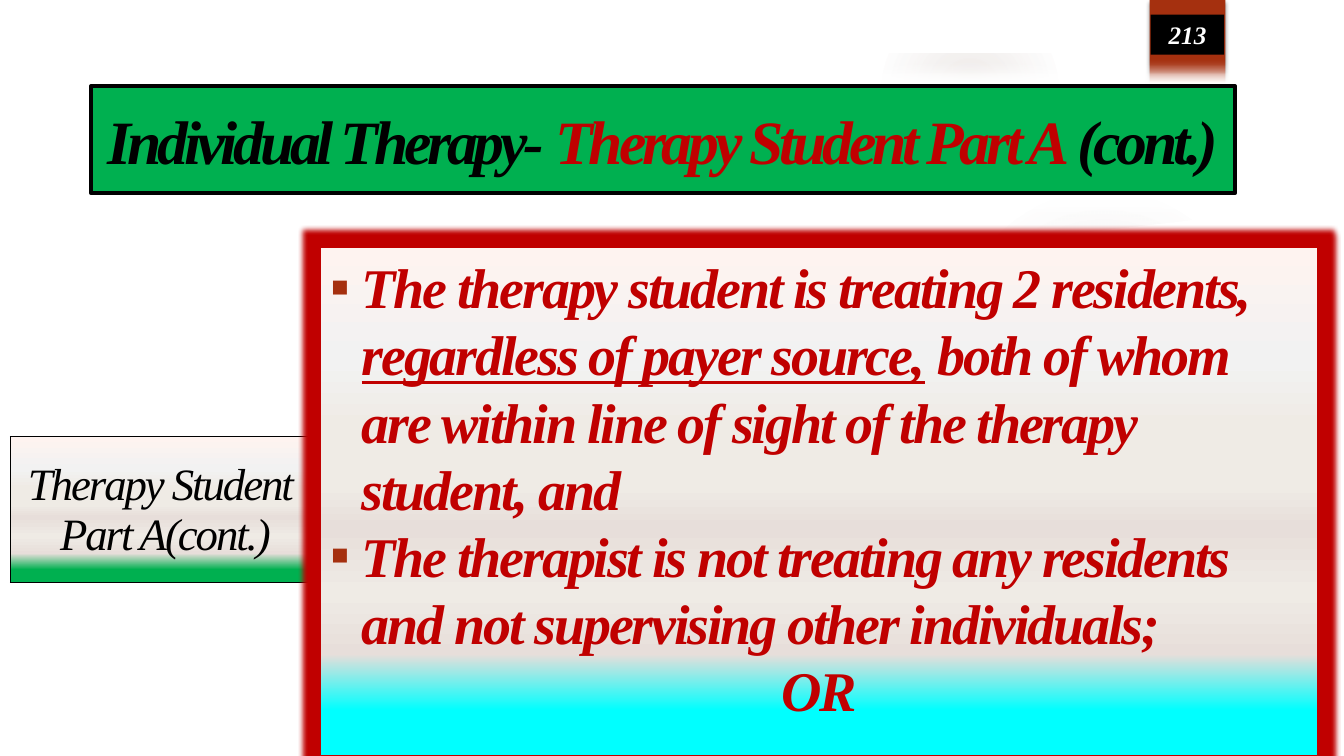
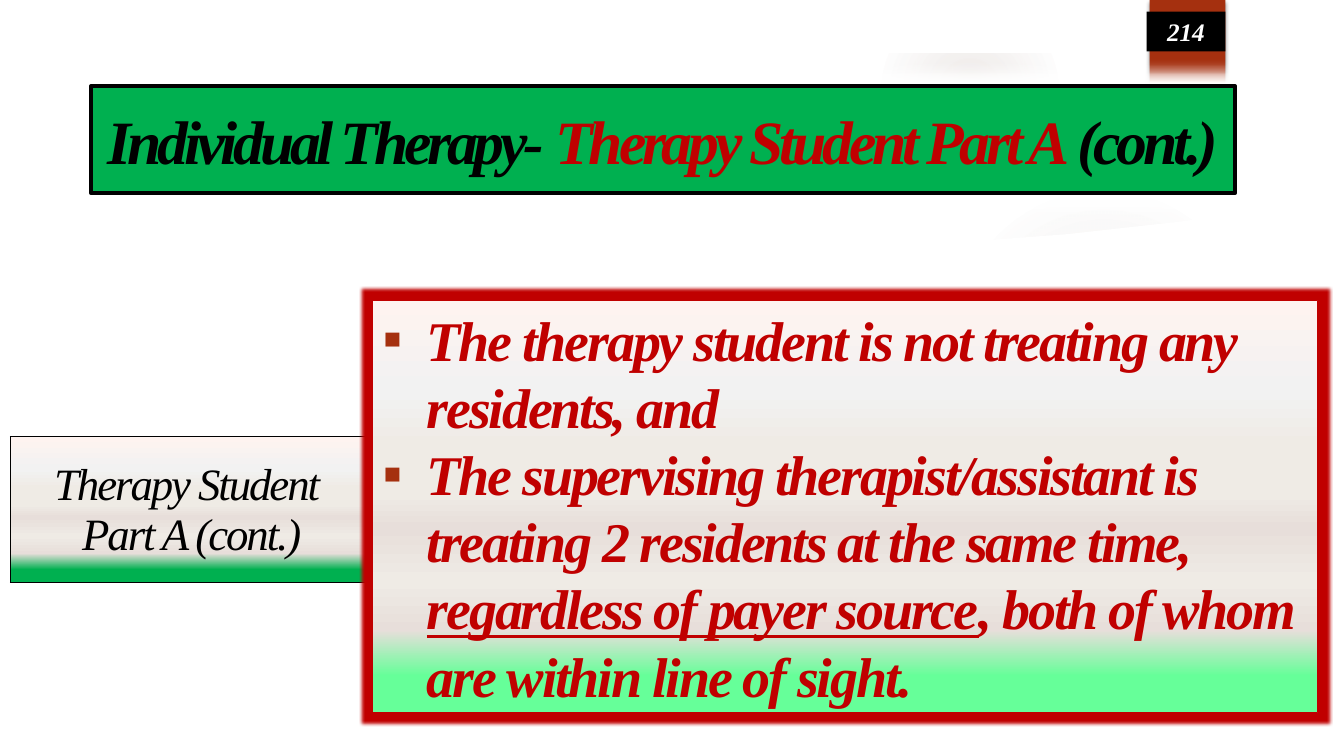
from lxml import etree
from pptx import Presentation
from pptx import util as u
from pptx.dml.color import RGBColor
from pptx.enum import shapes, text
from pptx.oxml.ns import qn

PX = 9525
FONT = "Times New Roman"
BLACK = RGBColor(0x00, 0x00, 0x00)
WHITE = RGBColor(0xFF, 0xFF, 0xFF)
RED = RGBColor(0xC0, 0x00, 0x00)
GREEN = RGBColor(0x00, 0xB0, 0x50)
RUST = RGBColor(0xA5, 0x30, 0x0F)
TAUPE = RGBColor(0x7F, 0x5F, 0x52)
CYAN = RGBColor(0x00, 0xFF, 0xFF)
MINT = RGBColor(0x66, 0xFF, 0x99)
BLUSH = RGBColor(0xFE, 0xF3, 0xF0)
MIST = RGBColor(0xF2, 0xF2, 0xF2)
SAND = RGBColor(0xEF, 0xEB, 0xE5)
CLAY = RGBColor(0xE7, 0xDE, 0xDA)
SHEEN = [(0, BLUSH), (22, MIST), (35, SAND), (47, SAND), (55, CLAY), (68, SAND), (80, CLAY)]
PAGE_EDGE = [(48, 196), (131, 210), (272, 221), (426, 231), (605, 237), (781, 236),
             (911, 231), (1017, 223), (1125, 211), (1233, 196), (1233, 672), (48, 672)]


def px(*lengths):
    """Turn pixel lengths into EMU."""
    return [u.Emu(length * PX) for length in lengths]


def child(parent, tag, **attributes):
    """Append a DrawingML element to parent."""
    element = etree.SubElement(parent, qn("a:" + tag))
    for key, value in attributes.items():
        element.set(key, str(value))
    return element


def tint(parent, color, opacity=100):
    """Append a colour with an opacity in percent."""
    alpha_host = child(parent, "srgbClr", val=color)
    if opacity < 100:
        child(alpha_host, "alpha", val=opacity * 1000)


def gradient(owner, element, stops, radial=False):
    """Fill a shape or cell with stops of position, colour and opacity."""
    owner.fill.gradient()
    owner.fill.gradient_angle = 270
    grad = element.find(".//" + qn("a:gradFill"))
    ramp = grad.find(qn("a:gsLst"))
    for stop in list(ramp):
        ramp.remove(stop)
    for position, *color in stops:
        tint(child(ramp, "gs", pos=position * 1000), *color)
    if radial:
        grad.remove(grad.find(qn("a:lin")))
        circle = child(grad, "path", path="circle")
        child(circle, "fillToRect", l=50000, t=50000, r=50000, b=50000)


def effect(shape, tag, color, opacity=100, **attributes):
    """Give a shape a single glow or shadow."""
    shape.shadow.inherit = False
    effects = shape._element.spPr.find(qn("a:effectLst"))
    tint(child(effects, tag, **attributes), color, opacity)


def paint(shape, color):
    """Fill a shape plainly, without outline or shadow."""
    shape.shadow.inherit = False
    shape.fill.solid()
    shape.fill.fore_color.rgb = color
    shape.line.fill.background()


def add_box(slide, box, color=WHITE, kind=shapes.MSO_SHAPE.RECTANGLE):
    """Add a plain preset shape."""
    shape = slide.shapes.add_shape(kind, *px(*box))
    paint(shape, color)
    return shape


def style(paragraph, size, color, bold=True, spacing=0, leading=None,
          align=text.PP_ALIGN.CENTER):
    """Set the italic serif look of a paragraph."""
    paragraph.alignment = align
    if leading:
        paragraph.line_spacing = u.Pt(leading)
    font = paragraph.font
    font.name, font.size, font.bold, font.italic = FONT, u.Pt(size), bold, True
    font.color.rgb = color
    font._element.set("spc", str(int(spacing * 100)))


def bullet(paragraph, indent):
    """Give a paragraph a square bullet with a hanging indent."""
    props = paragraph._p.get_or_add_pPr()
    props.set("marL", str(indent * PX))
    props.set("indent", str(-indent * PX))
    tint(child(props, "buClr"), RUST)
    child(props, "buFont", typeface=FONT)
    child(props, "buChar", char="▪")


def add_backdrop(slide):
    """Draw the faint discs, the page, its frame and the ribbon."""
    for box, edge in (((903, 176, 296, 296), (7, 6, 69)), ((840, 1, 168, 168), (14, 7, 73))):
        core, middle, rim = edge
        disc = add_box(slide, box, kind=shapes.MSO_SHAPE.OVAL)
        gradient(disc, disc._element,
                 [(0, TAUPE, core), (36, TAUPE, middle), (rim, TAUPE, 0)], radial=True)
    outline = slide.shapes.build_freeform(*PAGE_EDGE[0], scale=PX)
    outline.add_line_segments(PAGE_EDGE[1:], close=True)
    paint(outline.convert_to_shape(), WHITE)
    frame = add_box(slide, (0, 0, 1280, 720), kind=shapes.MSO_SHAPE.FRAME)
    frame.adjustments[0] = 0.07
    ribbon = add_box(slide, (1095, 0, 72, 120), RUST)
    effect(ribbon, "outerShdw", BLACK, 45, blurRad=u.Pt(3), dist=u.Pt(2), dir=5400000)


def add_title(slide, box):
    """Format the title placeholder as a green banner with a white glow."""
    title = slide.shapes.title
    slide.shapes._spTree.append(title._element)
    title.left, title.top, title.width, title.height = px(*box)
    title.fill.solid()
    title.fill.fore_color.rgb = GREEN
    title.line.color.rgb = BLACK
    title.line.width = u.Pt(3)
    effect(title, "glow", WHITE, rad=u.Pt(18))
    frame = title.text_frame
    frame.word_wrap = True
    frame.auto_size = text.MSO_AUTO_SIZE.NONE
    frame.vertical_anchor = text.MSO_ANCHOR.MIDDLE
    heading = frame.paragraphs[0]
    style(heading, 44, BLACK, spacing=-3)
    for words, color in (("Individual Therapy- ", BLACK), ("Therapy Student Part A ", RED),
                         ("(cont.)", BLACK)):
        run = heading.add_run()
        run.text = words
        run.font.color.rgb = color


def add_number(slide, box, number):
    """Add the page number on its black tag."""
    tag = add_box(slide, box, BLACK)
    tag.text_frame.vertical_anchor = text.MSO_ANCHOR.MIDDLE
    tag.text_frame.text = number
    style(tag.text_frame.paragraphs[0], 18, WHITE)


def add_topic(slide, box, lines):
    """Add the one-cell table that names the topic."""
    table = slide.shapes.add_table(1, 1, *px(*box)).table
    table.first_row = table.horz_banding = False
    cell = table.cell(0, 0)
    cell.vertical_anchor = text.MSO_ANCHOR.MIDDLE
    cell.text = "\n".join(lines)
    for paragraph in cell.text_frame.paragraphs:
        style(paragraph, 32, BLACK, bold=False, spacing=-1.5, leading=36)
    props = cell._tc.get_or_add_tcPr()
    gradient(cell, props, SHEEN + [(91, GREEN)])
    for index, side in enumerate(("lnL", "lnR", "lnT", "lnB")):
        border = child(props, side, w=u.Pt(1))
        tint(child(border, "solidFill"), BLACK)
        props.insert(index, border)


def add_rules(slide, box, base, glow, indent, rules, closing):
    """Add the panel of bulleted rules, with an optional centred last word."""
    panel = add_box(slide, box)
    gradient(panel, panel._element, SHEEN + [(91, base)])
    panel.line.color.rgb = RED
    panel.line.width = u.Pt(0.75)
    effect(panel, "glow", RED, rad=u.Pt(glow))
    frame = panel.text_frame
    frame.word_wrap = True
    frame.vertical_anchor = text.MSO_ANCHOR.TOP
    paragraph = frame.paragraphs[0]
    for position, rule in enumerate(rules + closing):
        if position:
            paragraph = frame.add_paragraph()
        align = text.PP_ALIGN.CENTER
        if position < len(rules):
            bullet(paragraph, indent)
            align = text.PP_ALIGN.LEFT
        style(paragraph, 40, RED, spacing=-1.5, leading=48, align=align)
        for part, words in enumerate(rule):
            run = paragraph.add_run()
            run.text = words
            if part == 1:
                run.font.underline = True


def add_slide(deck, number, tag, split, lines, panel, **rules):
    """Build a slide whose topic and rules meet at the split."""
    slide = deck.slides.add_slide(deck.slide_layouts[5])
    add_backdrop(slide)
    add_title(slide, (87, 82, 1089, 102))
    add_number(slide, tag, number)
    add_topic(slide, (10, 416, split - 10, 139), lines)
    top, height = panel
    add_rules(slide, (split, top, 1255 - split, height), **rules)


def main():
    """Build and save the deck."""
    deck = Presentation()
    deck.slide_width, deck.slide_height = px(1280, 720)
    add_slide(
        deck, "213", (1096, 14, 70, 38), 305, ["Therapy Student ", "Part A(cont.)"], (236, 484),
        base=CYAN, glow=8, indent=30,
        rules=[["The therapy student is treating 2 residents, ", "regardless of payer source,",
                " both of whom are within line of sight of the therapy student, and"],
               ["The therapist is not treating any residents and not supervising "
                "other individuals;"]],
        closing=[["OR"]])
    add_slide(
        deck, "214", (1092, 11, 75, 38), 355, ["Therapy Student ", "Part A (cont.)"], (286, 393),
        base=MINT, glow=5, indent=42,
        rules=[["The therapy student is not treating any residents, and"],
               ["The supervising therapist/assistant is treating 2 residents at the same time, ",
                "regardless of payer source", ", both of whom are within line of sight."]],
        closing=[])
    deck.save("out.pptx")


if __name__ == "__main__":
    main()
